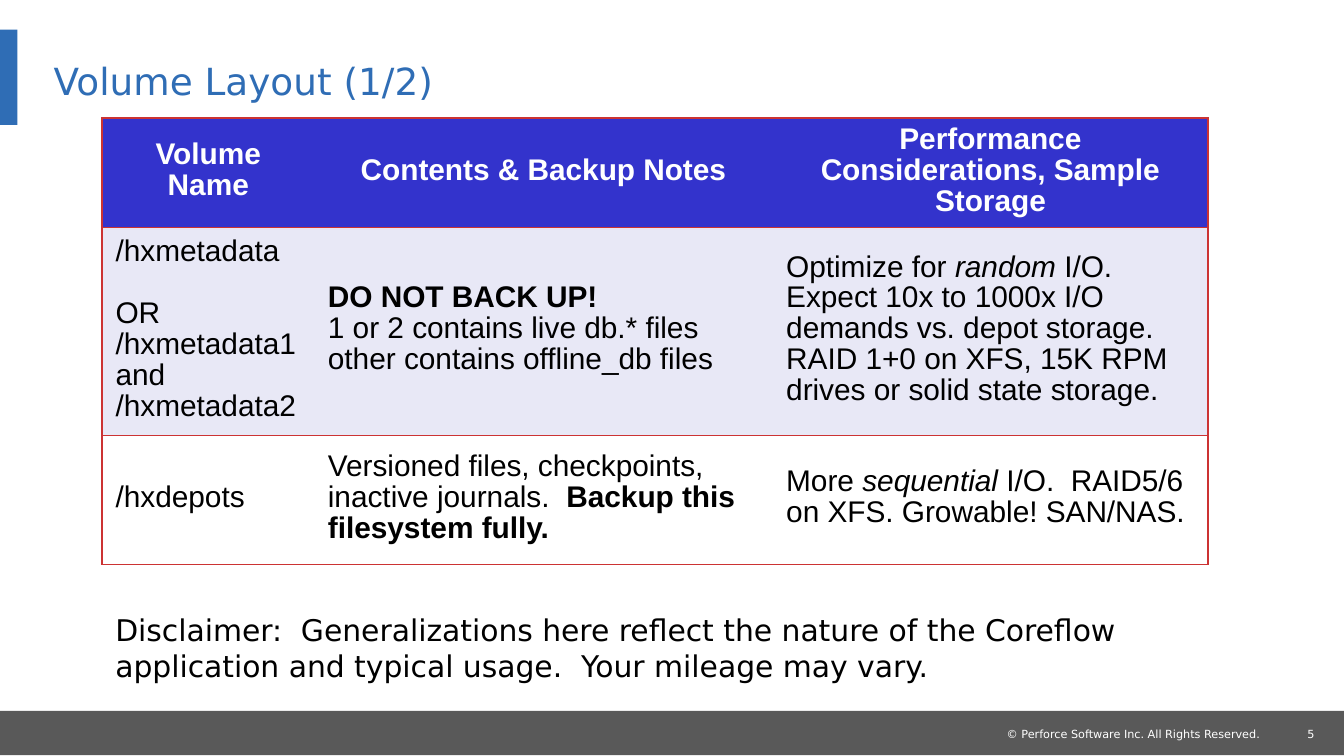
from dataclasses import dataclass

import pptx
import pptx.dml.color
import pptx.enum.shapes
import pptx.enum.text
import pptx.oxml
import pptx.oxml.ns
import pptx.util
from pptx.util import Inches


@dataclass(frozen=True)
class Theme:
    blue: str = "2F6DB5"
    grey: str = "595959"
    header: str = "3333CC"
    band: str = "E8E8F6"
    rule: str = "CC3333"
    white: str = "FFFFFF"
    black: str = "000000"
    display: str = "DejaVu Sans"
    body: str = "Arial"
    title_size: int = 20
    text_size: int = 16
    footer_size: int = 6


T = Theme()
PP_ALIGN = pptx.enum.text.PP_ALIGN
NO_TABLE_STYLE = "{2D5ABB26-0587-4C30-8999-92F81FD0307C}"
rgb = pptx.dml.color.RGBColor.from_string


def add_run(p, text, font, size, color, style=""):
    """Append a run; style may hold "b" for bold and "i" for italic."""
    r = p.add_run()
    r.text = text
    r.font.name = font
    r.font.size = pptx.util.Pt(size)
    r.font.color.rgb = rgb(color)
    r.font.bold = "b" in style
    r.font.italic = "i" in style


def add_border(cell, side):
    line = pptx.oxml.parse_xml(
        f'<a:ln{side} {pptx.oxml.ns.nsdecls("a")} w="12700"><a:solidFill>'
        f'<a:srgbClr val="{T.rule}"/></a:solidFill></a:ln{side}>')
    cell._tc.get_or_add_tcPr().append(line)


prs = pptx.Presentation()
prs.slide_width, prs.slide_height = Inches(10), Inches(10) * 9 // 16
s = prs.slides.add_slide(prs.slide_layouts[6])

# Footer bar and title accent
for box, color in [((0, 5.29, 10, 0.33), T.grey), ((0, 0.22, 0.13, 0.71), T.blue)]:
    sp = s.shapes.add_shape(pptx.enum.shapes.MSO_SHAPE.RECTANGLE, *map(Inches, box))
    sp.shadow.inherit = False
    sp.fill.solid()
    sp.fill.fore_color.rgb = rgb(color)
    sp.line.fill.background()

# Title, disclaimer and footer texts: box, text, size, colour, insets, wrap
texts = [
    ((0.4, 0.28, 7.74, 0.6), "Volume Layout (1/2)", T.title_size, T.blue, (0, 0), True),
    ((0.76, 4.5, 8.76, 0.64),
     "Disclaimer:  Generalizations here reflect the nature of the Coreflow "
     "application and typical usage.  Your mileage may vary.",
     T.text_size, T.black, (0.1, 0.05), True),
    ((7.49, 5.41, 1.94, 0.1), "© Perforce Software Inc. All Rights Reserved.",
     T.footer_size, T.white, (0, 0), False),
    ((9.35, 5.41, 0.43, 0.1), "5", T.footer_size, T.white, (0, 0), True),
]
for box, text, size, color, (inset_x, inset_y), wrap in texts:
    tf = s.shapes.add_textbox(*map(Inches, box)).text_frame
    tf.word_wrap = wrap
    tf.margin_left = tf.margin_right = Inches(inset_x)
    tf.margin_top = tf.margin_bottom = Inches(inset_y)
    p = tf.paragraphs[0]
    if size == T.title_size:
        tf.vertical_anchor = pptx.enum.text.MSO_ANCHOR.MIDDLE
        p.line_spacing = pptx.util.Pt(27)
    if text == "5":
        p.alignment = PP_ALIGN.RIGHT
    add_run(p, text, T.display, size, color)

# Volume table: each cell is a list of paragraphs, each a list of (text, style)
rows = [
    [
        [[("Volume Name", "b")]],
        [[("Contents & Backup Notes", "b")]],
        [[("Performance Considerations, Sample Storage", "b")]],
    ],
    [
        [[("/hxmetadata", "")], [("OR", "")], [("/hxmetadata1 and", "")],
         [("/hxmetadata2", "")]],
        [[("DO NOT BACK UP!", "b")], [("1 or 2 contains live db.* files", "")],
         [("other contains offline_db files", "")]],
        [[("Optimize for ", ""), ("random", "i"),
          (" I/O.  Expect 10x to 1000x I/O demands vs. depot storage.  "
           "RAID 1+0 on XFS, 15K RPM drives or solid state storage.", "")]],
    ],
    [
        [[("/hxdepots", "")]],
        [[("Versioned files, checkpoints, inactive journals.  ", ""),
          ("Backup this filesystem fully.", "b")]],
        [[("More ", ""), ("sequential", "i"),
          (" I/O.  RAID5/6 on XFS. Growable! SAN/NAS.", "")]],
    ],
]
col_widths = [1.58, 3.41, 3.24]
row_heights = [0.67, 1.29, 0.96]
fills = [T.header, T.band, T.white]

frame = s.shapes.add_table(
    len(rows), len(col_widths), Inches(0.76), Inches(0.88),
    Inches(sum(col_widths)), Inches(sum(row_heights)))
table = frame.table
table._tbl.tblPr.find(pptx.oxml.ns.qn("a:tableStyleId")).text = NO_TABLE_STYLE
for col, width in zip(table.columns, col_widths):
    col.width = Inches(width)
for row, height in zip(table.rows, row_heights):
    row.height = Inches(height)
frame.height = Inches(3.33)

for i, row in enumerate(rows):
    for j, paragraphs in enumerate(row):
        cell = table.cell(i, j)
        cell.margin_left = cell.margin_right = Inches(0.1)
        cell.margin_top, cell.margin_bottom = Inches(0.02), Inches(0.05)
        cell.vertical_anchor = pptx.enum.text.MSO_ANCHOR.MIDDLE
        for side in ("LTB", "TB", "RTB")[j]:
            add_border(cell, side)
        cell.fill.solid()
        cell.fill.fore_color.rgb = rgb(fills[i])
        tf = cell.text_frame
        for k, runs in enumerate(paragraphs):
            p = tf.add_paragraph() if k else tf.paragraphs[0]
            p.line_spacing = 0.93
            p.alignment = PP_ALIGN.LEFT if i else PP_ALIGN.CENTER
            if runs[0][0] == "OR":
                p.space_before = pptx.util.Pt(17)
            for text, style in runs:
                add_run(p, text, T.body, T.text_size, T.black if i else T.white, style)

prs.save("out.pptx")
